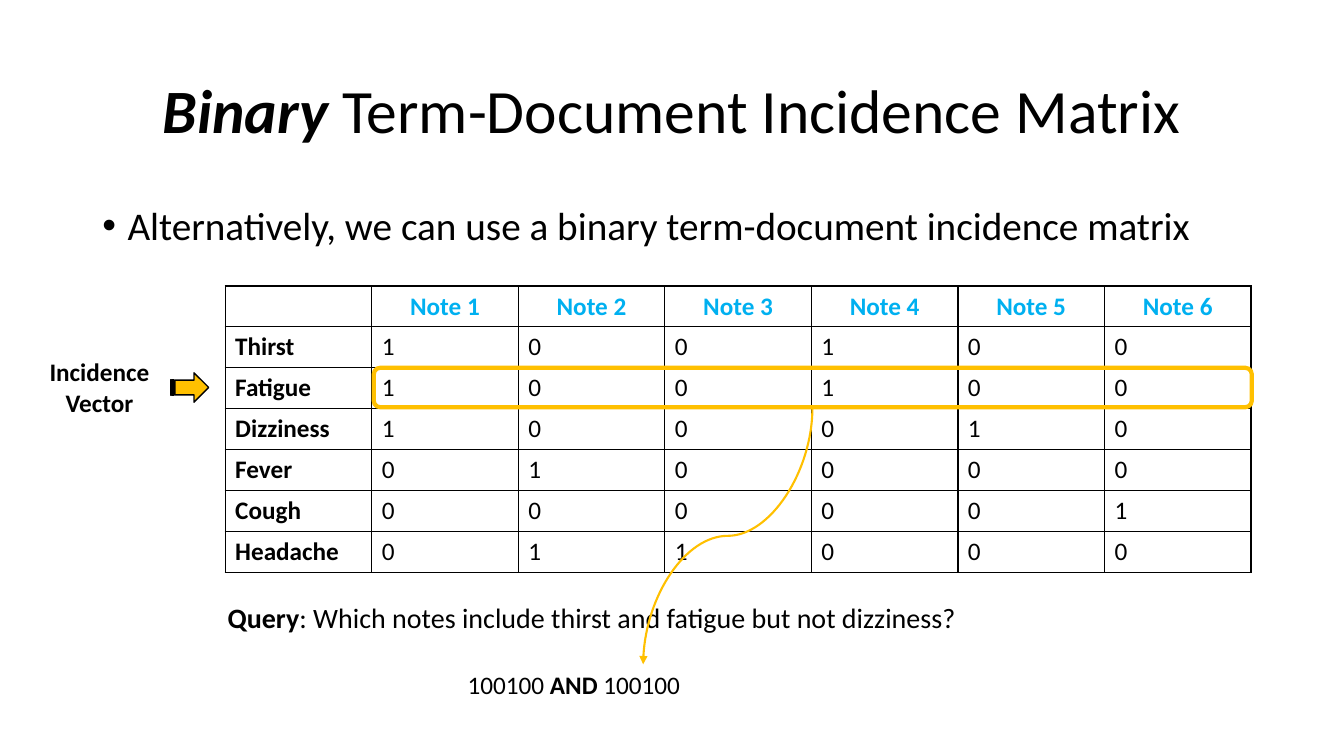
import pptx
import pptx.dml.color
import pptx.enum.dml
import pptx.enum.shapes
import pptx.enum.text
import pptx.oxml
import pptx.oxml.ns
import pptx.util

Pt = pptx.util.Pt
ALIGN = pptx.enum.text.PP_ALIGN
ANCHOR = pptx.enum.text.MSO_ANCHOR
SHAPE = pptx.enum.shapes.MSO_SHAPE
NAMESPACE = pptx.oxml.ns.nsdecls("a")

FONT = "Calibri"
BLACK, GOLD, BLUE = "000000", "FFC000", "00B0F0"
COLUMN_WIDTH, ROW_HEIGHT = 104.7, 29.2

NOTES = ["Note 1", "Note 2", "Note 3", "Note 4", "Note 5", "Note 6"]
INCIDENCE = {
    "Thirst": "100100",
    "Fatigue": "100100",
    "Dizziness": "100010",
    "Fever": "010000",
    "Cough": "000001",
    "Headache": "011000",
}


def rgb(hex_code):
    return pptx.dml.color.RGBColor.from_string(hex_code)


def points(*lengths):
    return [Pt(length) for length in lengths]


def format_run(run, size, bold=False, italic=False, color=BLACK):
    run.font.name = FONT
    run.font.size = Pt(size)
    run.font.bold = bold
    run.font.italic = italic
    run.font.color.rgb = rgb(color)


def write_parts(paragraph, size, parts):
    """Add a run for each (text, bold, italic) part, breaking lines at newlines."""
    for text, bold, italic in parts:
        for index, line in enumerate(text.split("\n")):
            if index:
                paragraph.add_line_break()
            run = paragraph.add_run()
            run.text = line
            format_run(run, size, bold, italic)


def add_label(slide, box, size, parts, align=ALIGN.LEFT, wrap=False):
    frame = slide.shapes.add_textbox(*points(*box)).text_frame
    frame.word_wrap = wrap
    paragraph = frame.paragraphs[0]
    paragraph.alignment = align
    write_parts(paragraph, size, parts)
    return paragraph


def add_title(slide, box):
    title = slide.shapes.title
    title.left, title.top, title.width, title.height = points(*box)
    title.text_frame.vertical_anchor = ANCHOR.MIDDLE
    heading = title.text_frame.paragraphs[0]
    heading.alignment = ALIGN.CENTER
    heading.line_spacing = 0.9
    write_parts(heading, 44, [("Binary", True, True),
                              (" Term-Document Incidence Matrix", False, False)])


def add_statement(slide, box):
    text = "Alternatively, we can use a binary term-document incidence matrix"
    statement = add_label(slide, box, 28, [(text, False, False)], wrap=True)
    statement.line_spacing = 0.9
    statement.space_before = Pt(10)
    properties = statement._p.get_or_add_pPr()
    properties.set("marL", str(Pt(18)))
    properties.set("indent", str(Pt(-18)))
    for bullet in ('<a:buFont %s typeface="Arial"/>', '<a:buChar %s char="•"/>'):
        properties.append(pptx.oxml.parse_xml(bullet % NAMESPACE))


def outline_cell(cell):
    properties = cell._tc.get_or_add_tcPr()
    for side in ("lnL", "lnR", "lnT", "lnB"):
        properties.append(pptx.oxml.parse_xml(
            f'<a:{side} {NAMESPACE} w="{Pt(1)}"><a:solidFill>'
            f'<a:srgbClr val="{BLACK}"/></a:solidFill></a:{side}>'))
    cell.fill.background()


def add_matrix(slide, left, top):
    rows = [["", *NOTES]] + [[term, *bits] for term, bits in INCIDENCE.items()]
    width, height = COLUMN_WIDTH * len(rows[0]), ROW_HEIGHT * len(rows)
    matrix = slide.shapes.add_table(
        len(rows), len(rows[0]), *points(left, top, width, height)).table
    matrix.first_row = matrix.horz_banding = False
    for column in matrix.columns:
        column.width = Pt(COLUMN_WIDTH)
    for r, values in enumerate(rows):
        matrix.rows[r].height = Pt(ROW_HEIGHT)
        for c, value in enumerate(values):
            cell = matrix.cell(r, c)
            outline_cell(cell)
            cell.text_frame.text = value
            paragraph = cell.text_frame.paragraphs[0]
            paragraph.alignment = ALIGN.LEFT if r else ALIGN.CENTER
            for run in paragraph.runs:
                format_run(run, 18, bold=r == 0 or c == 0,
                           color=BLACK if r else BLUE)


def add_outlined_shape(slide, kind, box, line_color, line_width, fill=None):
    shape = slide.shapes.add_shape(kind, *points(*box))
    shape.shadow.inherit = False
    shape.line.color.rgb = rgb(line_color)
    shape.line.width = Pt(line_width)
    if fill:
        shape.fill.solid()
        shape.fill.fore_color.rgb = rgb(fill)
    else:
        shape.fill.background()


def add_incidence_vector(slide, left, top):
    """Mark the Fatigue row of the matrix whose corner is given."""
    row_top = top + ROW_HEIGHT * (1 + list(INCIDENCE).index("Fatigue"))
    add_outlined_shape(
        slide, SHAPE.ROUNDED_RECTANGLE,
        (left + COLUMN_WIDTH + 1.5, row_top, COLUMN_WIDTH * len(NOTES) - 1, 28.2),
        GOLD, 3)
    add_outlined_shape(
        slide, SHAPE.STRIPED_RIGHT_ARROW,
        (left - 39.1, row_top + 3.6, 27.4, 21), BLACK, 1, GOLD)
    add_label(slide, (left - 132.7, row_top - 11.4, 90, 51), 18,
              [("Incidence \nVector ", True, False)], ALIGN.CENTER)


def add_curved_arrow(slide, start, end):
    """Draw an S-curve that leaves start and reaches end vertically."""
    (x1, y1), (x2, y2) = start, end
    middle_x, middle_y = (x1 + x2) / 2, (y1 + y2) / 2
    half_run, half_rise = (y2 - y1) / 2, (x1 - x2) / 2
    arrow = slide.shapes.add_connector(
        pptx.enum.shapes.MSO_CONNECTOR.CURVE,
        *points(middle_x - half_run, middle_y - half_rise,
                middle_x + half_run, middle_y + half_rise))
    arrow.line.color.rgb = rgb(GOLD)
    arrow.line.width = Pt(1.5)
    properties = arrow._element.spPr
    properties.xfrm.set("rot", str(90 * 60000))
    arrow.line._get_or_add_ln().append(
        pptx.oxml.parse_xml(f'<a:tailEnd {NAMESPACE} type="triangle"/>'))
    properties.append(pptx.oxml.parse_xml(f"<a:effectLst {NAMESPACE}/>"))


def add_query(slide, left, top):
    add_label(slide, (left, top, 540, 31.5), 20, [
        ("Query", True, False),
        (": Which notes include thirst and fatigue but not dizziness?", False, False)])
    add_label(slide, (left + 171.4, top + 49, 168, 29), 18, [
        ("100100 ", False, False), ("AND ", True, False), ("100100", False, False)])


def main():
    deck = pptx.Presentation()
    deck.slide_width, deck.slide_height = points(960, 540)
    slide = deck.slides.add_slide(deck.slide_layouts.get_by_name("Title Only"))
    matrix_corner = (160.8, 204.3)
    add_title(slide, (66, 28.8, 828, 104.4))
    add_matrix(slide, *matrix_corner)
    add_incidence_vector(slide, *matrix_corner)
    add_query(slide, 155.5, 425.5)
    add_curved_arrow(slide, (580.3, 291), (459.4, 474.5))
    add_statement(slide, (66, 144, 843.8, 367.2))
    deck.save("out.pptx")


if __name__ == "__main__":
    main()
